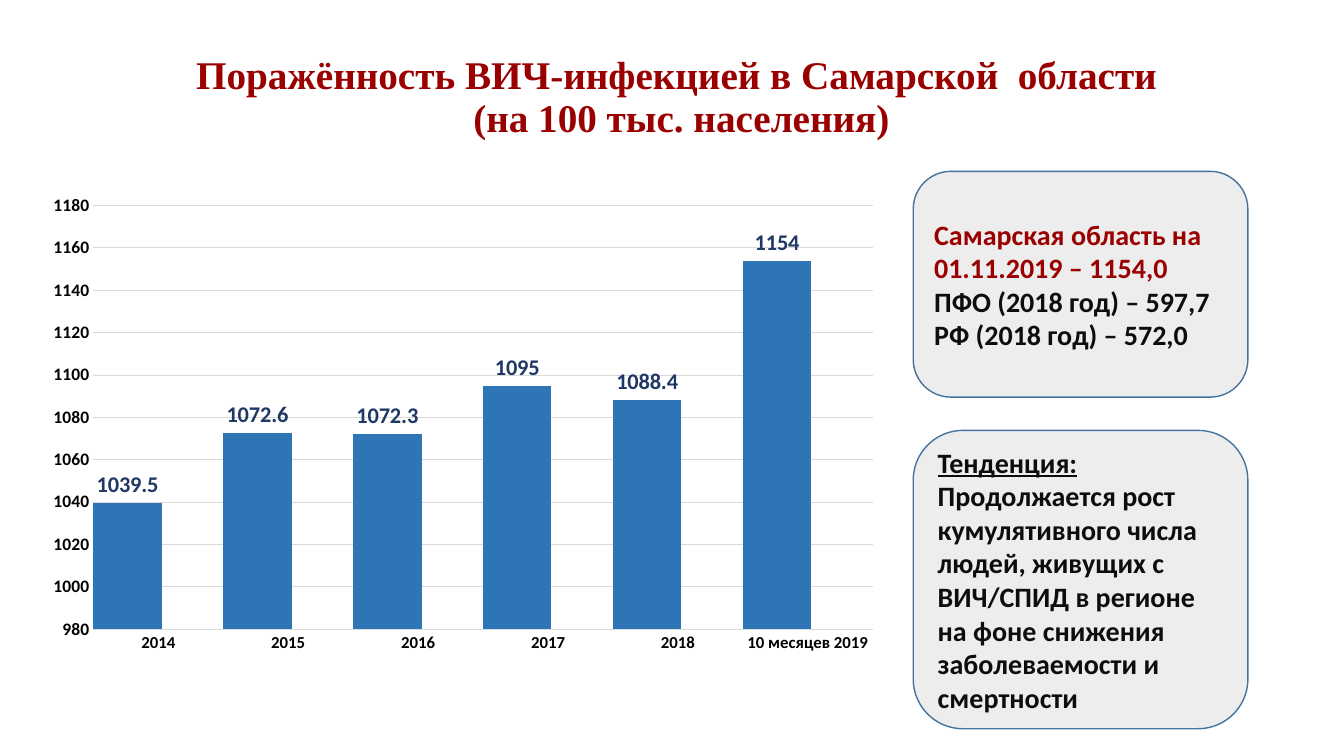
import pptx
import pptx.chart.data
import pptx.dml.color
import pptx.enum.chart
import pptx.enum.shapes
import pptx.enum.text
import pptx.util
from lxml import etree
from pptx.util import Pt

COLORS = {
    "title": "9A0000",
    "text": "0D0D0D",
    "panel": "EDEDED",
    "panel_line": "43739E",
    "bar": "2E75B6",
    "second": "ED7D31",
    "third": "A5A5A5",
    "bar_label": "203864",
    "axis": "000000",
    "grid": "D9D9D9",
}

YEARS = ["2014", "2015", "2016", "2017", "2018", "10 месяцев 2019"]
RATES = [1039.5, 1072.6, 1072.3, 1095, 1088.4, 1154]
PLOT_LAYOUT = {"x": 0.08, "y": 0.063, "w": 0.914, "h": 0.78}


def rgb(name):
    return pptx.dml.color.RGBColor.from_string(COLORS[name])


def style_font(font, size, color, name="Calibri", bold=True, underline=None):
    font.size = Pt(size)
    font.name = name
    font.bold = bold
    font.underline = underline
    font.color.rgb = rgb(color)


def add_text(paragraph, text, **font_format):
    """Add formatted text; each newline becomes a line break."""
    for index, line in enumerate(text.split("\n")):
        if index:
            paragraph.add_line_break()
        run = paragraph.add_run()
        run.text = line
        style_font(run.font, **font_format)


def add_title(slide, left, top, width, height):
    shape = slide.shapes.add_textbox(Pt(left), Pt(top), Pt(width), Pt(height))
    frame = shape.text_frame
    frame.word_wrap = True
    frame.vertical_anchor = pptx.enum.text.MSO_ANCHOR.MIDDLE
    paragraph = frame.paragraphs[0]
    paragraph.alignment = pptx.enum.text.PP_ALIGN.CENTER
    paragraph.line_spacing = 0.9
    add_text(paragraph,
             "Поражённость ВИЧ-инфекцией в Самарской  области \n(на 100 тыс. населения)",
             size=28, color="title", name="Times New Roman")


def add_panel(slide, left, top, width, height, paragraphs):
    """Draw a rounded panel; each paragraph is a list of (text, format)."""
    shape = slide.shapes.add_shape(
        pptx.enum.shapes.MSO_SHAPE.ROUNDED_RECTANGLE,
        Pt(left), Pt(top), Pt(width), Pt(height))
    shape.shadow.inherit = False
    shape.fill.solid()
    shape.fill.fore_color.rgb = rgb("panel")
    shape.line.color.rgb = rgb("panel_line")
    shape.line.width = Pt(1)
    frame = shape.text_frame
    frame.word_wrap = True
    frame.vertical_anchor = pptx.enum.text.MSO_ANCHOR.MIDDLE
    for index, runs in enumerate(paragraphs):
        paragraph = frame.add_paragraph() if index else frame.paragraphs[0]
        paragraph.alignment = pptx.enum.text.PP_ALIGN.LEFT
        for text, font_format in runs:
            add_text(paragraph, text, size=20, **font_format)


def set_plot_layout(chart):
    plot_area = chart.plots[0]._element.getparent()
    namespace = etree.QName(plot_area).namespace
    for old_layout in plot_area.findall(f"{{{namespace}}}layout"):
        plot_area.remove(old_layout)
    layout = etree.Element(f"{{{namespace}}}layout")
    manual = etree.SubElement(layout, f"{{{namespace}}}manualLayout")
    settings = {"layoutTarget": "inner", "xMode": "edge", "yMode": "edge", **PLOT_LAYOUT}
    for tag, value in settings.items():
        etree.SubElement(manual, f"{{{namespace}}}{tag}").set("val", str(value))
    plot_area.insert(0, layout)


def add_rate_chart(slide, left, top, width, height):
    data = pptx.chart.data.CategoryChartData()
    data.categories = YEARS
    data.add_series("Series 1", RATES)
    for name in ("Series 2", "Series 3"):
        data.add_series(name, [None] * len(YEARS))
    chart = slide.shapes.add_chart(
        pptx.enum.chart.XL_CHART_TYPE.COLUMN_CLUSTERED,
        Pt(left), Pt(top), Pt(width), Pt(height), data).chart
    chart.has_legend = False
    chart.has_title = False
    style_font(chart.font, size=10, color="axis", bold=False)
    set_plot_layout(chart)

    # Columns
    plot = chart.plots[0]
    plot.vary_by_categories = False
    plot.gap_width = 0
    plot.overlap = 55
    for series, color in zip(plot.series, ("bar", "second", "third")):
        series.format.fill.solid()
        series.format.fill.fore_color.rgb = rgb(color)
        series.invert_if_negative = False
    labels = plot.series[0].data_labels
    labels.show_value = True
    labels.position = pptx.enum.chart.XL_LABEL_POSITION.OUTSIDE_END
    style_font(labels.font, size=16, color="bar_label")

    # Axes
    for axis, size in ((chart.category_axis, 12), (chart.value_axis, 12.5)):
        axis.major_tick_mark = pptx.enum.chart.XL_TICK_MARK.NONE
        axis.minor_tick_mark = pptx.enum.chart.XL_TICK_MARK.NONE
        style_font(axis.tick_labels.font, size=size, color="axis")
    chart.value_axis.minimum_scale = 980
    chart.value_axis.maximum_scale = 1180
    chart.value_axis.major_unit = 20
    chart.value_axis.format.line.fill.background()
    chart.value_axis.has_major_gridlines = True
    for line in (chart.category_axis.format.line,
                 chart.value_axis.major_gridlines.format.line):
        line.color.rgb = rgb("grid")
        line.width = Pt(0.75)


def build_slide(presentation):
    slide = presentation.slides.add_slide(presentation.slide_layouts[6])
    add_title(slide, 72.72, 18, 828, 104.4)

    # Regional comparison and trend
    panel_left, panel_width = 652.32, 239.04
    dark = {"color": "text"}
    add_panel(slide, panel_left, 122.4, panel_width, 161.28, [
        [("Самарская область на 01.11.2019 – 1154,0", {"color": "title"})],
        [("ПФО (2018 год) – 597,7", dark)],
        [("РФ (2018 год) – 572,0", dark)],
    ])
    add_panel(slide, panel_left, 307.44, panel_width, 213.12, [[
        ("Тенденция: ", {"color": "text", "underline": True}),
        ("Продолжается рост кумулятивного числа людей, живущих с ВИЧ/СПИД "
         "в регионе на фоне снижения заболеваемости и смертности", dark),
    ]])

    add_rate_chart(slide, 18, 122.4, 609.12, 388.08)


def main():
    presentation = pptx.Presentation()
    presentation.slide_width = Pt(960)
    presentation.slide_height = Pt(540)
    build_slide(presentation)
    presentation.save("out.pptx")


if __name__ == "__main__":
    main()
